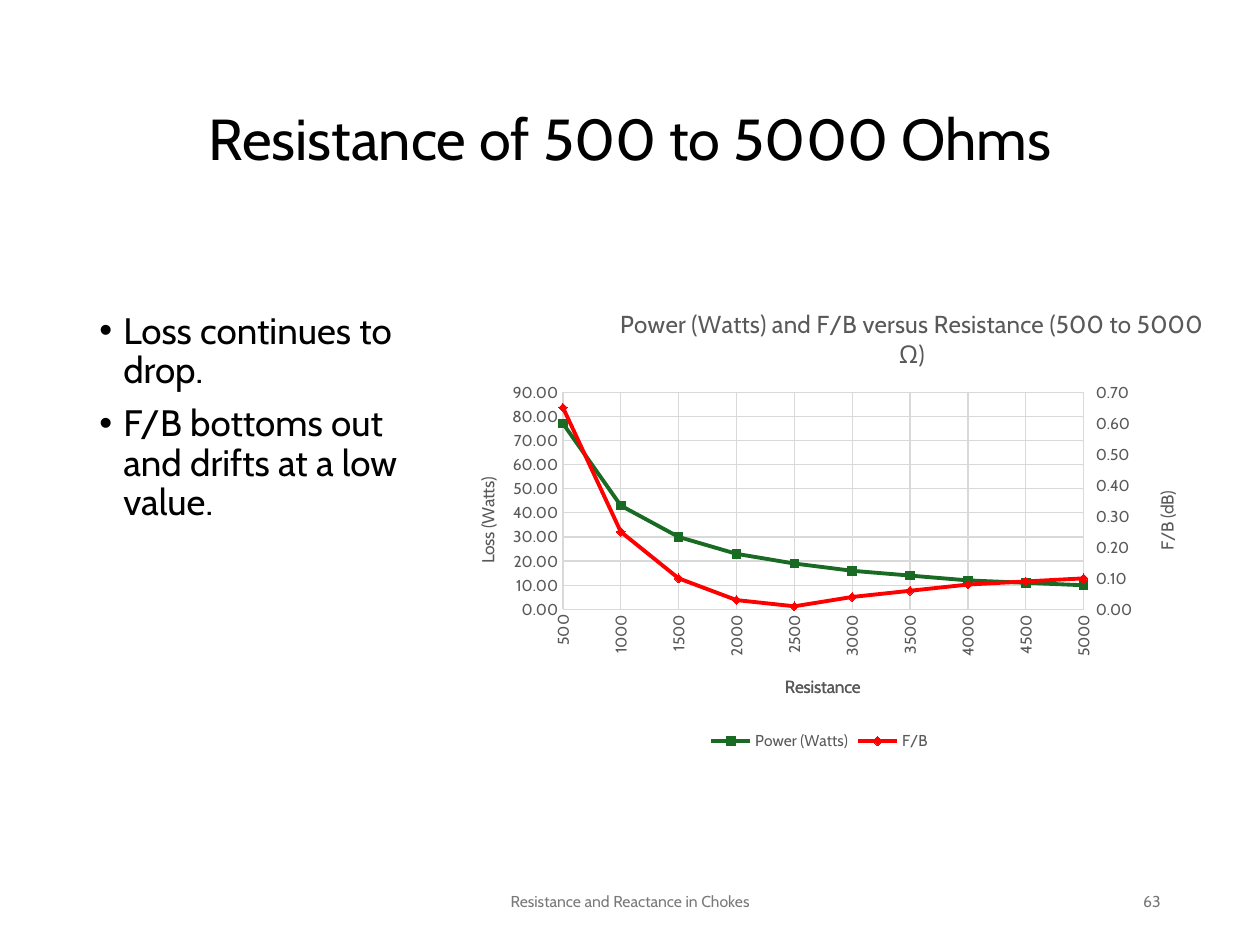
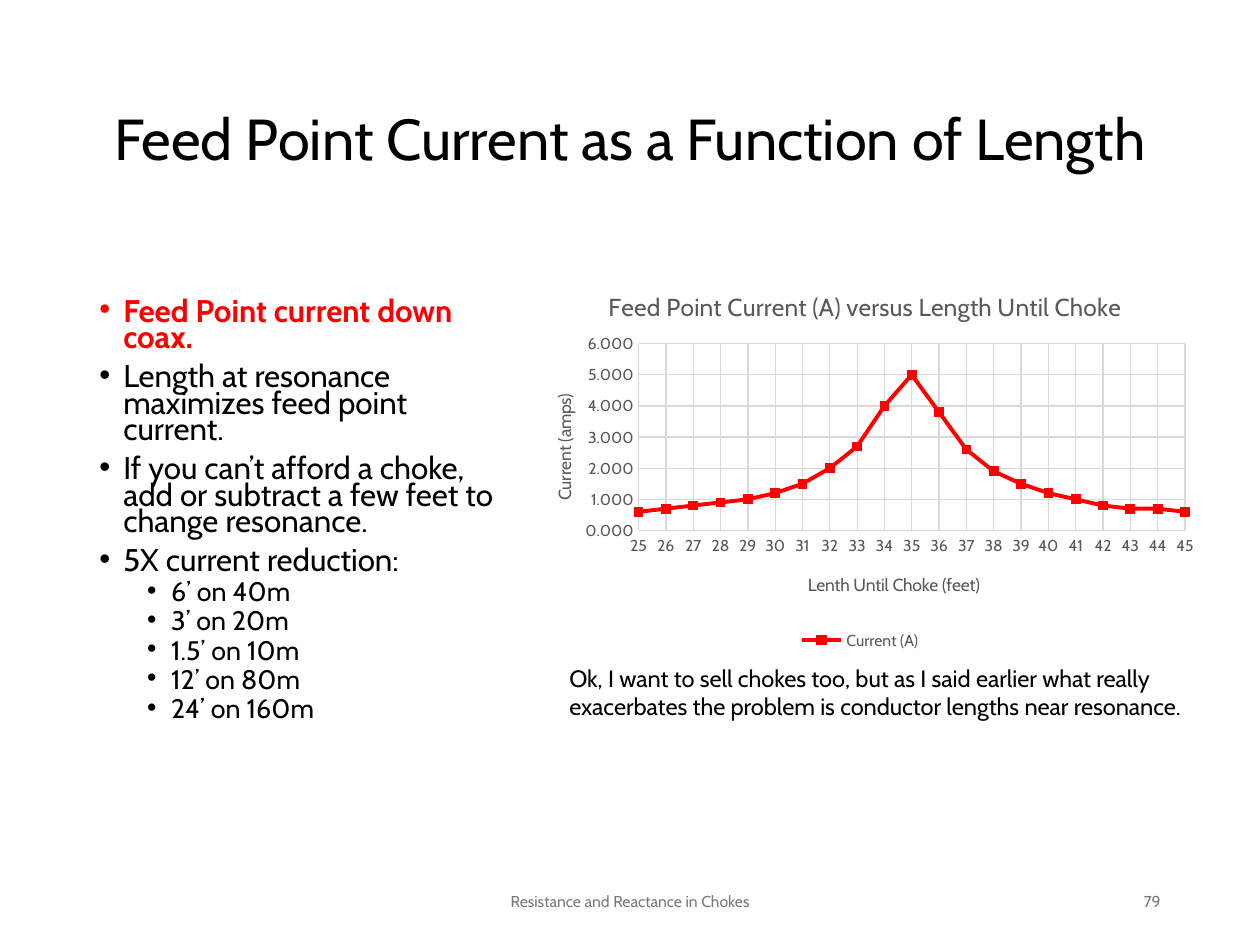
"""Builds two slides on chokes, each with bullets and a line chart."""
from copy import deepcopy

from lxml import etree
from pptx import Presentation
from pptx.chart.axis import ValueAxis
from pptx.chart.data import CategoryChartData
from pptx.dml.color import RGBColor
from pptx.enum.chart import XL_CHART_TYPE, XL_LEGEND_POSITION, XL_TICK_MARK
from pptx.enum.text import MSO_ANCHOR, PP_ALIGN
from pptx.oxml.ns import qn
from pptx.util import Inches, Pt

LINE = XL_CHART_TYPE.LINE
BOTTOM = XL_LEGEND_POSITION.BOTTOM
NONE, OUT = XL_TICK_MARK.NONE, XL_TICK_MARK.OUTSIDE
TOP, MIDDLE = MSO_ANCHOR.TOP, MSO_ANCHOR.MIDDLE
LEFT, CENTER, RIGHT = PP_ALIGN.LEFT, PP_ALIGN.CENTER, PP_ALIGN.RIGHT

BLACK = RGBColor(0x00, 0x00, 0x00)
RED = RGBColor(0xFF, 0x00, 0x00)
GREEN = RGBColor(0x19, 0x6B, 0x24)
GRAY = RGBColor(0x79, 0x79, 0x79)
SLATE = RGBColor(0x59, 0x59, 0x59)
PALE = RGBColor(0xD9, 0xD9, 0xD9)
FONT = "Cabin"
UP = "-5400000"
INDENT = Inches(0.19)

deck = Presentation()
deck.slide_width, deck.slide_height = Inches(10), Inches(7.5)
COL, ROW = deck.slide_width / 100, deck.slide_height / 100


def place(node, index, spot):
    """Give a chart part a fixed spot, in shares of the chart."""
    for old in node.findall(qn("c:layout")):
        node.remove(old)
    layout = etree.Element(qn("c:layout"))
    node.insert(index, layout)
    manual = etree.SubElement(layout, qn("c:manualLayout"))
    if len(spot) == 4:
        etree.SubElement(manual, qn("c:layoutTarget"), val="inner")
    for key in ("xMode", "yMode"):
        etree.SubElement(manual, qn("c:" + key), val="edge")
    for key, share in zip("xywh", spot):
        etree.SubElement(manual, qn("c:" + key), val=str(share))


def label(title, words, size, spot, turn="0"):
    """Write a chart or axis title and set its place."""
    frame = title.text_frame
    frame.text = words
    frame._txBody.bodyPr.set("rot", turn)
    font = frame.paragraphs[0].runs[0].font
    for key, value in dict(name=FONT, size=Pt(size), bold=False).items():
        setattr(font, key, value)
    font.color.rgb = SLATE
    place(title._element, 1, spot)


PAGES = [
    dict(
        title="Resistance of 500 to 5000 Ohms", page="63",
        body=(6.9, 32.4, 29.2, 47.6), sizes=(21, 21), gap=0.9, lead=None,
        points=[(0, "Loss continues to drop."),
                (0, "F/B bottoms out and drifts at a low value.")],
        note=None,
        chart=(35.1, 30, 60.8, 50), plot=(0.16, 0.23, 0.69, 0.46),
        head=("Power (Watts) and F/B versus Resistance (500 to 5000 Ω)", (0.23, 0.04)),
        under=("Resistance", (0.45, 0.82)),
        side=("Loss (Watts)", (0.04, 0.4)),
        right=("F/B (dB)", (0.94, 0.43)),
        format="0.00", top=90, step=10, turn=UP,
        cats=range(500, 5001, 500),
        series=[("Power (Watts)", GREEN, [77, 43, 30, 23, 19, 16, 14, 12, 11, 10]),
                ("F/B", RED, [0.65, 0.25, 0.1, 0.03, 0.01, 0.04, 0.06, 0.08, 0.09, 0.1])],
    ),
    dict(
        title="Feed Point Current as a Function of Length", page="79",
        body=(6.9, 31.2, 34.9, 47.6), sizes=(17.9, 15.3), gap=0.7, lead=RED,
        points=[(0, "Feed Point current down coax."),
                (0, "Length at resonance maximizes feed point current."),
                (0, "If you can’t afford a choke, add or subtract a few feet to change resonance."),
                (0, "5X current reduction:"),
                (1, "6’ on 40m"), (1, "3’ on 20m"), (1, "1.5’ on 10m"),
                (1, "12’ on 80m"), (1, "24’ on 160m")],
        note="Ok, I want to sell chokes too, but as I said earlier what really "
             "exacerbates the problem is conductor lengths near resonance.",
        chart=(40.8, 28.13, 54.9, 41.2), plot=(0.18, 0.2, 0.79, 0.48),
        head=("Feed Point Current (A) versus Length Until Choke", (0.13, 0.05)),
        under=("Lenth Until Choke (feet)", (0.42, 0.78)),
        side=("Current (amps)", (0.05, 0.32)),
        right=None,
        format="0.000", top=6, step=1, turn="0",
        cats=range(25, 46),
        series=[("Current (A)", RED,
                 [0.6, 0.7, 0.8, 0.9, 1, 1.2, 1.5, 2, 2.7, 4, 5, 3.8, 2.6, 1.9,
                  1.5, 1.2, 1, 0.8, 0.7, 0.7, 0.6])],
    ),
]

for page in PAGES:
    slide = deck.slides.add_slide(deck.slide_layouts[5])
    title = slide.shapes.title
    spot = dict(left=6.9 * COL, top=5.33 * ROW, width=86.2 * COL, height=19.33 * ROW)
    for key, value in spot.items():
        setattr(title, key, int(value))
    title.text_frame.vertical_anchor = MIDDLE
    title.text = page["title"]
    para = title.text_frame.paragraphs[0]
    para.alignment, para.line_spacing = CENTER, 0.9
    para.font.name, para.font.size = FONT, Pt(33)
    para.font.color.rgb = BLACK

    texts = [
        (page["body"], page["points"], page["sizes"], BLACK, LEFT, TOP),
        ((33.1, 92.67, 33.8, 5.33), [(0, "Resistance and Reactance in Chokes")],
         (9,), GRAY, CENTER, MIDDLE),
        ((70.6, 92.67, 22.5, 5.33), [(0, page["page"])], (9,), GRAY, RIGHT, MIDDLE),
    ]
    if page["note"]:
        texts.append(((44.2, 69.6, 51.6, 10.4), [(0, page["note"])],
                      (13.5,), BLACK, LEFT, TOP))
    for (x, y, w, h), lines, sizes, color, align, anchor in texts:
        box = slide.shapes.add_textbox(int(x * COL), int(y * ROW), int(w * COL), int(h * ROW))
        frame = box.text_frame
        frame.word_wrap, frame.vertical_anchor = True, anchor
        for at, (level, words) in enumerate(lines):
            para = frame.paragraphs[0] if at == 0 else frame.add_paragraph()
            para.text, para.alignment, para.level = words, align, level
            font = para.runs[0].font
            font.name, font.size = FONT, Pt(sizes[level])
            font.color.rgb = color
            if lines is not page["points"]:
                continue
            if at == 0 and page["lead"]:
                font.bold, font.color.rgb = True, page["lead"]
            para.line_spacing = page["gap"]
            para.space_before = Pt((7.5, 3.8)[level])
            props = para._p.get_or_add_pPr()
            props.set("marL", str(INDENT * (1 + 2 * level)))
            props.set("indent", str(-INDENT))
            etree.SubElement(props, qn("a:buFont"), typeface="Arial")
            etree.SubElement(props, qn("a:buChar"), char="•")

    data = CategoryChartData(number_format=page["format"])
    data.categories = [str(cat) for cat in page["cats"]]
    for name, color, values in page["series"]:
        data.add_series(name, values)
    x, y, w, h = page["chart"]
    chart = slide.shapes.add_chart(
        LINE, int(x * COL), int(y * ROW), int(w * COL), int(h * ROW), data).chart
    chart.font.name, chart.font.size = FONT, Pt(9)
    chart.font.color.rgb = SLATE
    chart.has_title = chart.has_legend = True
    label(chart.chart_title, page["head"][0], 14, page["head"][1])
    chart.legend.position, chart.legend.include_in_layout = BOTTOM, False
    chart.plots[0].vary_by_categories = False
    for line, (name, color, values) in zip(chart.plots[0].series, page["series"]):
        line.smooth = False
        line.marker.style = None
        line.format.line.width = Pt(2.25)
        line.format.line.color.rgb = color

    base, scale = chart.category_axis, chart.value_axis
    for axis, (words, spot), turn in ((base, page["under"], "0"), (scale, page["side"], UP)):
        axis.has_major_gridlines = True
        axis.major_tick_mark = axis.minor_tick_mark = NONE
        for edge in (axis.major_gridlines.format.line, axis.format.line):
            edge.width = Pt(0.75)
            edge.color.rgb = PALE
        label(axis.axis_title, words, 10, spot, turn)
        axis.tick_labels.font.size = Pt(9)
    scale.format.line.fill.background()
    base._element.find(qn("c:txPr")).find(qn("a:bodyPr")).set("rot", page["turn"])
    ends = dict(minimum_scale=0, maximum_scale=page["top"], major_unit=page["step"])
    for key, value in ends.items():
        setattr(scale, key, value)
    scale.tick_labels.number_format = page["format"]
    scale.tick_labels.number_format_is_linked = False
    for old in scale._element.findall(qn("c:crossBetween")):
        scale._element.remove(old)
    scale._element.find(qn("c:crosses")).addnext(
        etree.Element(qn("c:crossBetween"), val="midCat"))

    area = chart._chartSpace.chart.plotArea
    if page["right"]:
        first = area.find(qn("c:lineChart"))
        second = deepcopy(first)
        first.addnext(second)
        first.remove(first.findall(qn("c:ser"))[1])
        second.remove(second.find(qn("c:ser")))
        hidden, twin = deepcopy(base._element), deepcopy(scale._element)
        scale._element.addnext(twin)
        twin.addnext(hidden)
        for node, own, other in ((hidden, "901", "902"), (twin, "902", "901")):
            node.find(qn("c:axId")).set("val", own)
            node.find(qn("c:crossAx")).set("val", other)
        for node, own in zip(second.findall(qn("c:axId")), ("901", "902")):
            node.set("val", own)
        hidden.find(qn("c:delete")).set("val", "1")
        twin.find(qn("c:axPos")).set("val", "r")
        twin.find(qn("c:crosses")).set("val", "max")
        mate = ValueAxis(twin)
        ends = dict(has_major_gridlines=False, major_tick_mark=OUT,
                    maximum_scale=0.7, major_unit=0.1)
        for key, value in ends.items():
            setattr(mate, key, value)
        label(mate.axis_title, page["right"][0], 10, page["right"][1], UP)
    place(area, 0, page["plot"])

deck.save("out.pptx")
